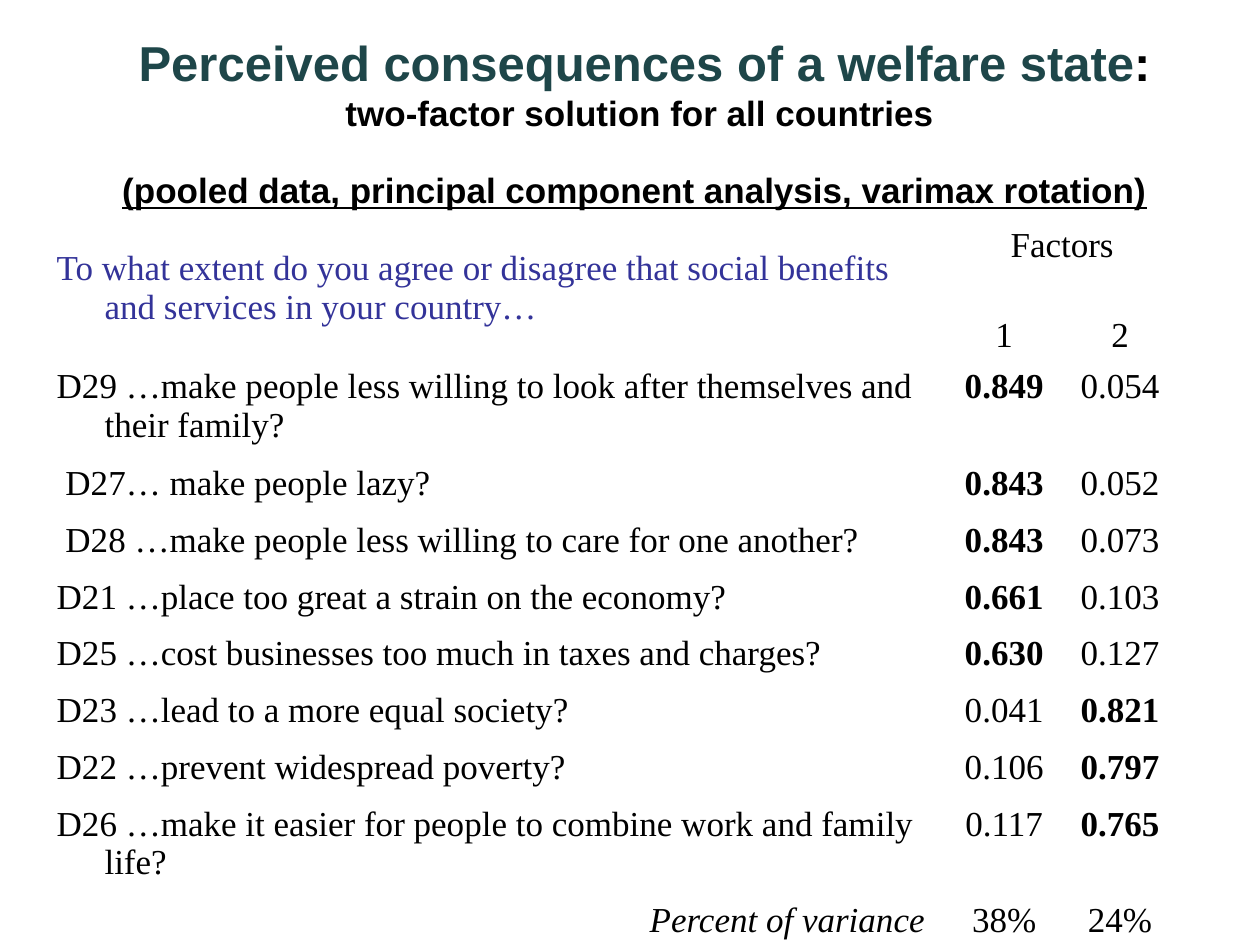
from dataclasses import dataclass

from pptx import Presentation
from pptx.dml.color import RGBColor
from pptx.enum.text import MSO_ANCHOR, PP_ALIGN
from pptx.util import Inches, Pt

BLACK = RGBColor(0x00, 0x00, 0x00)
WHITE = RGBColor(0xFF, 0xFF, 0xFF)
TEAL = RGBColor(0x1E, 0x46, 0x49)
INDIGO = RGBColor(0x33, 0x33, 0x99)
LEFT, CENTER, RIGHT = PP_ALIGN.LEFT, PP_ALIGN.CENTER, PP_ALIGN.RIGHT
TOP, MIDDLE, BOTTOM = MSO_ANCHOR.TOP, MSO_ANCHOR.MIDDLE, MSO_ANCHOR.BOTTOM

TITLE_LAYOUT = 5
COLUMN_WIDTHS = (7.16, 0.92, 0.92)
SINGLE_ROW, DOUBLE_ROW = 0.45, 0.77
HEADER_ROWS = 2
HANGING = 0.38
SALIENT = 0.5  # loadings above this are bold


@dataclass(frozen=True)
class TextStyle:
    size: int
    font: str = "Times New Roman"
    color: RGBColor = BLACK
    bold: bool = False
    italic: bool = False
    underline: bool = False


@dataclass(frozen=True)
class Item:
    question: str
    loadings: tuple[str, str]
    height: float = SINGLE_ROW


BODY = TextStyle(20)
BOLD = TextStyle(20, bold=True)
ITALIC = TextStyle(20, italic=True)
QUESTION = TextStyle(20, color=INDIGO)
HEADING = TextStyle(28, "Arial", TEAL, bold=True)
COLON = TextStyle(28, "Arial", bold=True)
SUBTITLE = TextStyle(20, "Arial", bold=True)
METHOD = TextStyle(20, "Arial", bold=True, underline=True)
TAIL = TextStyle(40, "Arial")

ITEMS = (
    Item("D29 …make people less willing to look after themselves and their family?",
         ("0.849", "0.054"), DOUBLE_ROW),
    Item(" D27… make people lazy?", ("0.843", "0.052")),
    Item(" D28 …make people less willing to care for one another?", ("0.843", "0.073")),
    Item("D21 …place too great a strain on the economy?", ("0.661", "0.103")),
    Item("D25 …cost businesses too much in taxes and charges?", ("0.630", "0.127")),
    Item("D23 …lead to a more equal society?", ("0.041", "0.821")),
    Item("D22 …prevent widespread poverty?", ("0.106", "0.797")),
    Item("D26 …make it easier for people to combine work and family life?",
         ("0.117", "0.765"), DOUBLE_ROW),
)


def add_run(paragraph, text: str, style: TextStyle) -> None:
    run = paragraph.add_run()
    run.text = text
    font = run.font
    font.name, font.size = style.font, Pt(style.size)
    font.bold, font.italic, font.underline = style.bold, style.italic, style.underline
    font.color.rgb = style.color


def set_indent(paragraph, margin: float, first_line: float) -> None:
    properties = paragraph._p.get_or_add_pPr()
    properties.set("marL", str(Inches(margin)))
    properties.set("indent", str(Inches(first_line)))


def fill_cell(cell, text: str, style: TextStyle = BODY, align=CENTER, anchor=TOP) -> None:
    cell.vertical_anchor = anchor
    paragraph = cell.text_frame.paragraphs[0]
    paragraph.alignment = align
    set_indent(paragraph, HANGING, -HANGING)
    add_run(paragraph, text, style)


def add_title(slide) -> None:
    title = slide.shapes.title
    title.left, title.top = Inches(0.43), Inches(0.21)
    title.width, title.height = Inches(9.37), Inches(1.57)
    frame = title.text_frame
    frame.word_wrap = True
    frame.vertical_anchor = MIDDLE
    paragraph = frame.paragraphs[0]
    paragraph.alignment = CENTER
    paragraph.line_spacing = 1.0
    set_indent(paragraph, 0, -0.54)  # heading sits left of the lines below
    add_run(paragraph, "Perceived consequences of a welfare state", HEADING)
    add_run(paragraph, ":", COLON)
    paragraph.add_line_break()
    add_run(paragraph, "two-factor solution for all countries ", SUBTITLE)
    paragraph.add_line_break()
    add_run(paragraph, "(pooled data, principal component analysis, varimax rotation)", METHOD)
    add_run(paragraph, " ", TAIL)


def add_factor_table(slide) -> None:
    heights = [SINGLE_ROW] * HEADER_ROWS + [item.height for item in ITEMS] + [SINGLE_ROW]
    table = slide.shapes.add_table(
        len(heights), len(COLUMN_WIDTHS), Inches(0.35), Inches(1.7),
        Inches(sum(COLUMN_WIDTHS)), Inches(sum(heights))).table
    table.first_row = table.horz_banding = False
    for column, width in zip(table.columns, COLUMN_WIDTHS):
        column.width = Inches(width)
    for row, height in zip(table.rows, heights):
        row.height = Inches(height)
    for cell in table.iter_cells():
        cell.fill.solid()
        cell.fill.fore_color.rgb = WHITE

    # Header
    table.cell(0, 0).merge(table.cell(1, 0))
    table.cell(0, 1).merge(table.cell(0, 2))
    fill_cell(table.cell(0, 0), "To what extent do you agree or disagree that social "
              "benefits and services in your country…", QUESTION, LEFT, MIDDLE)
    fill_cell(table.cell(0, 1), "Factors", anchor=BOTTOM)
    for column in (1, 2):
        fill_cell(table.cell(1, column), str(column), anchor=BOTTOM)

    # Items and their loadings
    for row, item in enumerate(ITEMS, HEADER_ROWS):
        fill_cell(table.cell(row, 0), item.question, align=LEFT)
        for column, loading in enumerate(item.loadings, 1):
            style = BOLD if float(loading) > SALIENT else BODY
            fill_cell(table.cell(row, column), loading, style)

    # Explained variance
    last = len(heights) - 1
    fill_cell(table.cell(last, 0), "Percent of variance ", ITALIC, RIGHT)
    for column, share in enumerate(("38%", "24%"), 1):
        fill_cell(table.cell(last, column), share)


def main() -> None:
    presentation = Presentation()
    presentation.slide_width, presentation.slide_height = Inches(10), Inches(7.5)
    slide = presentation.slides.add_slide(presentation.slide_layouts[TITLE_LAYOUT])
    add_title(slide)
    add_factor_table(slide)
    presentation.save("out.pptx")


if __name__ == "__main__":
    main()
